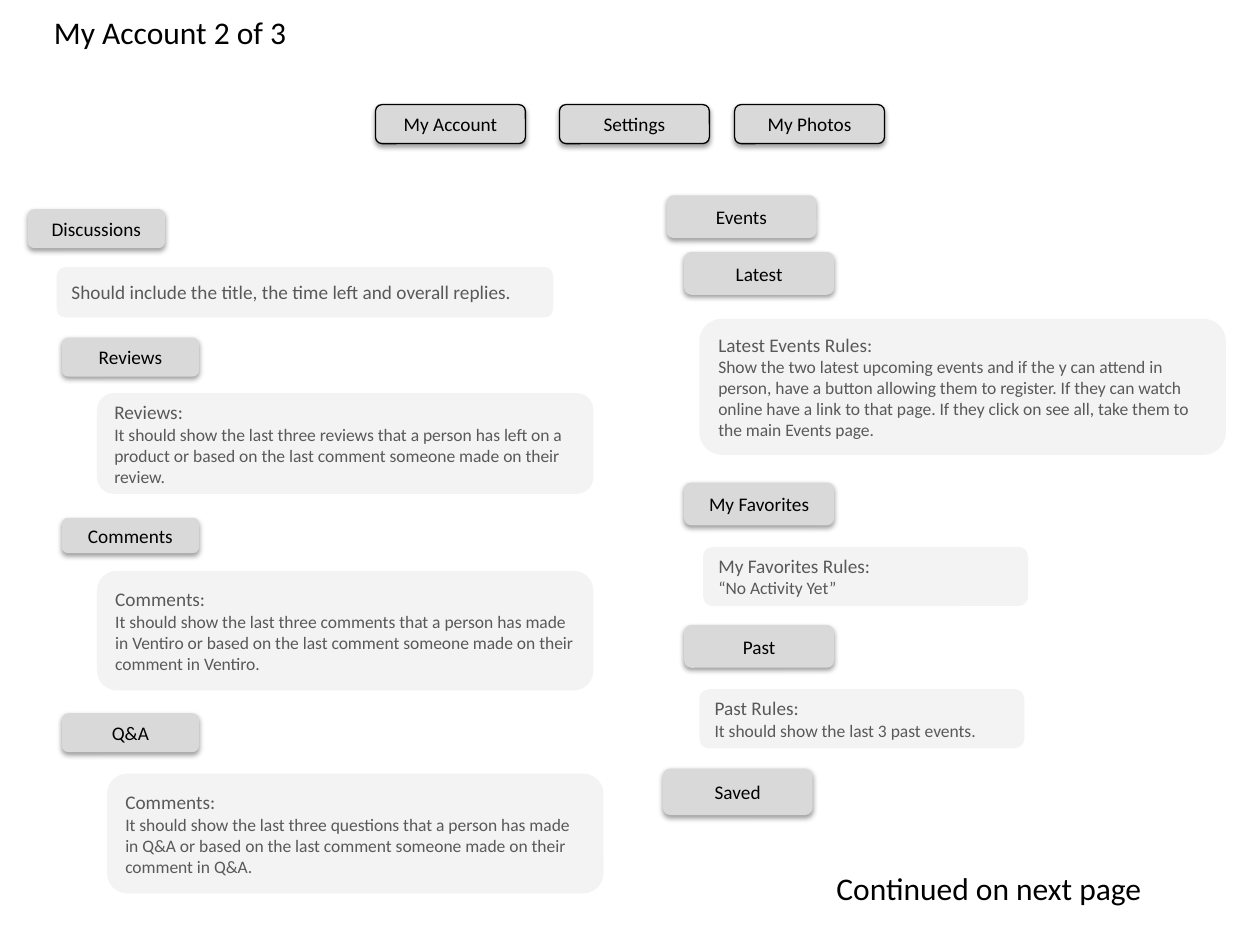
from dataclasses import dataclass
from typing import Any

import pptx
import pptx.dml.color
import pptx.enum.shapes
import pptx.enum.text
import pptx.oxml
import pptx.oxml.ns
import pptx.util

Inches = pptx.util.Inches
ALIGN = pptx.enum.text.PP_ALIGN
ANCHOR = pptx.enum.text.MSO_ANCHOR

COLORS = {"ink": "000000", "button": "D9D9D9", "note": "F3F3F3", "body": "595959"}
FONT = "Calibri"
HEAD, BODY, TITLE = 11, 10, 18
SHADOW = (
    f'<a:outerShdw {pptx.oxml.ns.nsdecls("a")} blurRad="{pptx.util.Pt(3.1)}" '
    f'dist="{pptx.util.Pt(1.6)}" dir="5400000" algn="t" rotWithShape="0">'
    f'<a:srgbClr val="{COLORS["ink"]}"><a:alpha val="38000"/></a:srgbClr></a:outerShdw>'
)


@dataclass
class Button:
    text: str
    left: float
    top: float
    width: float = 1.19
    height: float = 0.34
    framed: bool = False


@dataclass
class Note:
    lines: tuple[str, ...]
    left: float
    top: float
    width: float
    height: float


TABS = [
    Button(text, left, 0.83, height=0.31, framed=True)
    for text, left in (("My Account", 2.98), ("Settings", 4.44), ("My Photos", 5.83))
]
TOPICS = [
    Button("Discussions", 0.22, 1.66, 1.09, 0.31),
    Button("Reviews", 0.49, 2.68, 1.09, 0.31),
    Button("Comments", 0.49, 4.11, 1.09, 0.28),
    Button("Q&A", 0.49, 5.66, 1.09, 0.31),
]
EVENTS = [
    Button("Events", 5.29, 1.55),
    Button("Latest", 5.43, 2),
    Button("My Favorites", 5.43, 3.83),
    Button("Past", 5.43, 4.96),
    Button("Saved", 5.26, 6.1, height=0.37),
]
NOTES = [
    Note(("Should include the title, the time left and overall replies.",), 0.45, 2.12, 3.94, 0.4),
    Note(("Reviews:", "It should show the last three reviews that a person has left on a "
          "product or based on the last comment someone made on their review."),
         0.77, 3.12, 3.94, 0.8),
    Note(("Comments:", "It should show the last three comments that a person has made in "
          "Ventiro or based on the last comment someone made on their comment in Ventiro."),
         0.77, 4.53, 3.94, 0.95),
    Note(("Comments:", "It should show the last three questions that a person has made in "
          "Q&A or based on the last comment someone made on their comment in Q&A."),
         0.85, 6.14, 3.94, 0.95),
    Note(("Latest Events Rules:", "Show the two latest upcoming events and if the y can attend "
          "in person, have a button allowing them to register. If they can watch online have a "
          "link to that page. If they click on see all, take them to the main Events page."),
         5.55, 2.53, 4.18, 1.08),
    Note(("My Favorites Rules:", "“No Activity Yet”"), 5.58, 4.34, 2.58, 0.47),
    Note(("Past Rules:", "It should show the last 3 past events."), 5.55, 5.47, 2.58, 0.47),
]


def paint(name: str) -> pptx.dml.color.RGBColor:
    return pptx.dml.color.RGBColor.from_string(COLORS[name])


def apply(target: Any, values: dict[str, Any]) -> None:
    for name, value in values.items():
        setattr(target, name, value)


def write(shape: Any, lines: tuple[str, ...], sizes: tuple[int, ...], color: str,
          align: Any = ALIGN.LEFT, anchor: Any = ANCHOR.MIDDLE, wrap: bool = True) -> None:
    frame = shape.text_frame
    apply(frame, {"word_wrap": wrap, "vertical_anchor": anchor})
    for spot, (line, size) in enumerate(zip(lines, sizes)):
        para = frame.add_paragraph() if spot else frame.paragraphs[0]
        para.alignment = align
        run = para.add_run()
        run.text = line
        apply(run.font, {"name": FONT, "size": pptx.util.Pt(size)})
        run.font.color.rgb = paint(color)


def place(item: Button | Note) -> tuple[int, ...]:
    return tuple(Inches(x) for x in (item.left, item.top, item.width, item.height))


def add_box(slide: Any, item: Button | Note, fill: str) -> Any:
    kind = pptx.enum.shapes.MSO_SHAPE.ROUNDED_RECTANGLE
    box = slide.shapes.add_shape(kind, *place(item))
    box.shadow.inherit = False
    box.fill.solid()
    box.fill.fore_color.rgb = paint(fill)
    box.line.fill.background()
    return box


def add_button(slide: Any, item: Button) -> None:
    box = add_box(slide, item, "button")
    if item.framed:
        box.line.color.rgb = paint("ink")
        box.line.width = pptx.util.Pt(0.75)
    effects = box._element.spPr.find(pptx.oxml.ns.qn("a:effectLst"))
    effects.append(pptx.oxml.parse_xml(SHADOW))
    write(box, (item.text,), (HEAD,), "ink", ALIGN.CENTER)


def add_note(slide: Any, item: Note) -> None:
    write(add_box(slide, item, "note"), item.lines, (HEAD, BODY), "body")


def add_label(slide: Any, item: Note, anchor: Any, wrap: bool) -> None:
    box = slide.shapes.add_textbox(*place(item))
    write(box, item.lines, (TITLE,), "ink", anchor=anchor, wrap=wrap)


def main() -> None:
    deck = pptx.Presentation()
    apply(deck, {"slide_width": Inches(10), "slide_height": Inches(7.5)})
    slide = deck.slides.add_slide(deck.slide_layouts[6])
    add_label(slide, Note(("My Account 2 of 3",), 0.33, 0.03, 3.13, 0.45), ANCHOR.MIDDLE, True)
    for button in TABS + TOPICS + EVENTS:
        add_button(slide, button)
    for note in NOTES:
        add_note(slide, note)
    add_label(slide, Note(("Continued on next page",), 6.54, 6.85, 2.65, 0.95), ANCHOR.TOP, False)
    deck.save("out.pptx")


if __name__ == "__main__":
    main()
